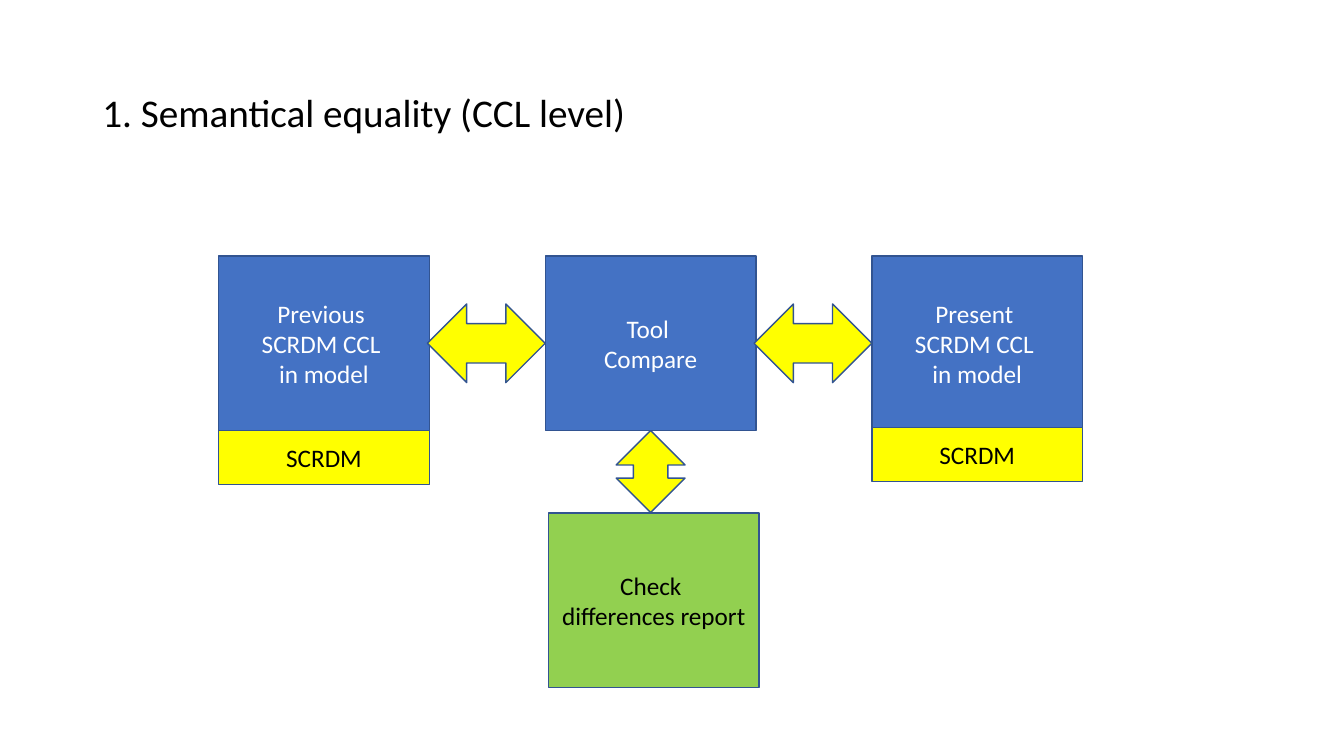
from pptx import Presentation
from pptx.dml.color import RGBColor
from pptx.enum import shapes, text
from pptx.util import Pt

# Content
TITLE = "1. Semantical equality (CCL level)"
STAGES = [
    ["Previous ", "SCRDM CCL ", "in model"],
    ["Tool ", "Compare"],
    ["Present ", "SCRDM CCL ", "in model"],
]
LABEL = ["SCRDM"]
REPORT = ["Check ", "differences report"]

THEME = {
    "font": "Calibri", "title_size": 28, "body_size": 18,
    "blue": "4472C4", "yellow": "FFFF00", "green": "92D050",
    "outline": "325491", "white": "FFFFFF", "black": "000000",
}

# Layout, in points
PAGE_WIDTH, PAGE_HEIGHT = 960, 540
BOX_WIDTH, BOX_HEIGHT = 150.5, 124.6
FIRST_LEFT, STAGE_TOP, STAGE_PITCH = 156.2, 182.9, 233.3
ARROW_WIDTH, ARROW_HEIGHT = 84.2, 56.2
LABEL_HEIGHT = 38.9
LABEL_TOPS = {0: 307.4, 2: 305.3}
REPORT_LEFT, REPORT_TOP = 391.7, 366.5
DOWN_WIDTH, DOWN_HEIGHT = 49.2, 58.6

KIND = shapes.MSO_SHAPE


def write(box, lines, size, color, align, spacing=None):
    frame = box.text_frame
    frame.word_wrap = True
    frame.vertical_anchor = text.MSO_ANCHOR.MIDDLE
    for index, line in enumerate(lines):
        para = frame.add_paragraph() if index else frame.paragraphs[0]
        para.alignment = align
        para.line_spacing = spacing
        span = para.add_run()
        span.text = line
        span.font.name = THEME["font"]
        span.font.size = Pt(size)
        span.font.color.rgb = RGBColor.from_string(THEME[color])


def add_block(page, kind, place, fill, lines=(), color="black"):
    box = page.shapes.add_shape(kind, *map(Pt, place))
    box.shadow.inherit = False
    box.fill.solid()
    box.fill.fore_color.rgb = RGBColor.from_string(THEME[fill])
    box.line.color.rgb = RGBColor.from_string(THEME["outline"])
    box.line.width = Pt(1)
    write(box, lines, THEME["body_size"], color, text.PP_ALIGN.CENTER)


def main():
    deck = Presentation()
    deck.slide_width, deck.slide_height = Pt(PAGE_WIDTH), Pt(PAGE_HEIGHT)
    page = deck.slides.add_slide(deck.slide_layouts[6])

    # Title
    title = page.shapes.add_textbox(Pt(66), Pt(29.5), Pt(828), Pt(104.4))
    write(title, [TITLE], THEME["title_size"], "black", text.PP_ALIGN.LEFT, 0.9)

    # Stages across the page
    lefts = [FIRST_LEFT + index * STAGE_PITCH for index in range(len(STAGES))]
    for left, lines in zip(lefts, STAGES):
        add_block(page, KIND.RECTANGLE, (left, STAGE_TOP, BOX_WIDTH, BOX_HEIGHT),
                  "blue", lines, "white")

    # Arrow from the tool down to the report
    down_left = lefts[1] + (BOX_WIDTH - DOWN_WIDTH) / 2
    add_block(page, KIND.UP_DOWN_ARROW,
              (down_left, STAGE_TOP + BOX_HEIGHT, DOWN_WIDTH, DOWN_HEIGHT), "yellow")

    # Arrows between neighbouring stages, each ending at the next box
    arrow_top = STAGE_TOP + (BOX_HEIGHT - ARROW_HEIGHT) / 2
    for left in lefts[1:]:
        add_block(page, KIND.LEFT_RIGHT_ARROW,
                  (left - ARROW_WIDTH, arrow_top, ARROW_WIDTH, ARROW_HEIGHT), "yellow")

    # Labels under the two models
    for index, top in LABEL_TOPS.items():
        add_block(page, KIND.RECTANGLE, (lefts[index], top, BOX_WIDTH, LABEL_HEIGHT),
                  "yellow", LABEL)

    # Report
    add_block(page, KIND.RECTANGLE, (REPORT_LEFT, REPORT_TOP, BOX_WIDTH, BOX_HEIGHT),
              "green", REPORT)

    deck.save("out.pptx")


if __name__ == "__main__":
    main()
